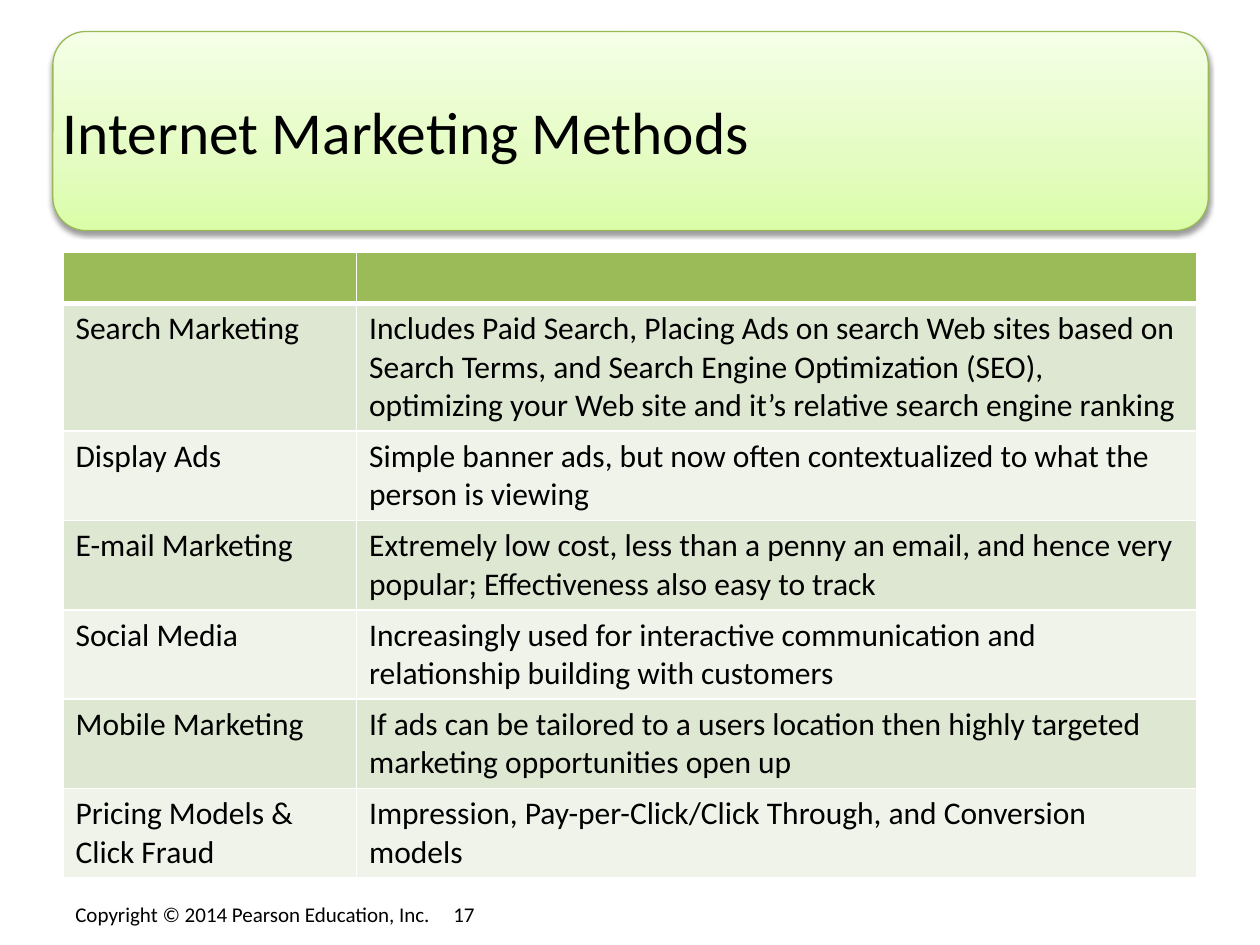
"""Build the Internet Marketing Methods slide with its table of methods."""
import pptx
import pptx.dml.color
import pptx.enum.shapes
import pptx.enum.text
import pptx.oxml
import pptx.oxml.ns
import pptx.util

Inches = pptx.util.Inches

COLORS = {
    "text": "000000",
    "border": "FFFFFF",
    "header": "9BBB59",
    "odd row": "DEE7D1",
    "even row": "EFF3EA",
    "banner line": "98B955",
    "shadow": "000000",
}
BANNER_STOPS = [(0, "DAFDA7"), (35, "E4FCC2"), (100, "F5FFE7")]
TITLE = "Internet Marketing Methods"
FOOTER = "Copyright © 2014 Pearson Education, Inc. \t17"
FOOTER_TAB = 3.0
METHODS = [
    ("", ""),
    ("Search Marketing",
     "Includes Paid Search, Placing Ads on search Web sites based on Search Terms, and "
     "Search Engine Optimization (SEO), optimizing your Web site and it’s relative "
     "search engine ranking"),
    ("Display Ads",
     "Simple banner ads, but now often contextualized to what the person is viewing"),
    ("E-mail Marketing",
     "Extremely low cost, less than a penny an email, and hence very popular; "
     "Effectiveness also easy to track"),
    ("Social Media",
     "Increasingly used for interactive communication and relationship building with "
     "customers"),
    ("Mobile Marketing",
     "If ads can be tailored to a users location then highly targeted marketing "
     "opportunities open up"),
    ("Pricing Models & Click Fraud",
     "Impression, Pay-per-Click/Click Through, and Conversion models"),
]
COLUMN_WIDTHS = [2.33, 6.67]
ROW_HEIGHTS = [0.41, 1.01] + [0.71] * 5
BODY_FORMAT = {"name": "Calibri", "size": pptx.util.Pt(18), "bold": False}
TITLE_FORMAT = {**BODY_FORMAT, "size": pptx.util.Pt(34)}
FOOTER_FORMAT = {**BODY_FORMAT, "size": pptx.util.Pt(12)}


def rgb(name):
    return pptx.dml.color.RGBColor.from_string(COLORS[name])


def element(markup):
    head, rest = markup.split(" ", 1)
    return pptx.oxml.parse_xml(f"{head} {pptx.oxml.ns.nsdecls('a')} {rest}")


def write(frame, text, values):
    para = frame.paragraphs[0]
    if text:
        para.add_run().text = text
    for font in [para.font] + [span.font for span in para.runs]:
        for key, value in values.items():
            setattr(font, key, value)
        font.color.rgb = rgb("text")


def add_text(page, place, text, values, margin=None):
    frame = page.shapes.add_textbox(*map(Inches, place)).text_frame
    frame.word_wrap = True
    if margin is not None:
        for side in ("left", "top", "right", "bottom"):
            setattr(frame, f"margin_{side}", Inches(margin))
    if "\t" in text:
        tabs = element(f'<a:tabLst ><a:tab pos="{Inches(FOOTER_TAB)}" algn="l"/></a:tabLst>')
        frame.paragraphs[0]._p.get_or_add_pPr().append(tabs)
    write(frame, text, values)
    return frame


def add_banner(page):
    kind = pptx.enum.shapes.MSO_SHAPE.ROUNDED_RECTANGLE
    banner = page.shapes.add_shape(kind, *map(Inches, (0.42, 0.25, 9.17, 1.58)))
    banner.fill.gradient()
    banner.fill.gradient_angle = 90
    stops = banner._element.spPr.find(".//" + pptx.oxml.ns.qn("a:gsLst"))
    stops.clear()
    for position, color in BANNER_STOPS:
        stops.append(element(
            f'<a:gs pos="{position * 1000}"><a:srgbClr val="{color}"/></a:gs>'))
    banner.line.color.rgb = rgb("banner line")
    banner.line.width = pptx.util.Pt(0.75)
    banner.shadow.inherit = False
    effects = banner._element.spPr.find(pptx.oxml.ns.qn("a:effectLst"))
    effects.append(element(
        f'<a:outerShdw blurRad="{pptx.util.Pt(3.1)}" dist="{pptx.util.Pt(1.6)}" '
        f'dir="5400000" rotWithShape="0"><a:srgbClr val="{COLORS["shadow"]}">'
        '<a:alpha val="38000"/></a:srgbClr></a:outerShdw>'))


def set_borders(cell, widths):
    for index, (side, width) in enumerate(widths.items()):
        cell._tc.get_or_add_tcPr().insert(index, element(
            f'<a:ln{side} w="{pptx.util.Pt(width)}"><a:solidFill>'
            f'<a:srgbClr val="{COLORS["border"]}"/></a:solidFill></a:ln{side}>'))


def add_methods(page):
    place = (0.5, 2, sum(COLUMN_WIDTHS), sum(ROW_HEIGHTS))
    table = page.shapes.add_table(
        len(METHODS), len(COLUMN_WIDTHS), *map(Inches, place)).table
    for column, width in zip(table.columns, COLUMN_WIDTHS):
        column.width = Inches(width)
    for index, (row, height, texts) in enumerate(zip(table.rows, ROW_HEIGHTS, METHODS)):
        row.height = Inches(height)
        band = "header" if index == 0 else "odd row" if index % 2 else "even row"
        widths = {"L": 1, "R": 1, "T": 3 if index == 1 else 1, "B": 3 if index == 0 else 1}
        for cell, text in zip(row.cells, texts):
            cell.fill.solid()
            cell.fill.fore_color.rgb = rgb(band)
            set_borders(cell, widths)
            write(cell.text_frame, text, BODY_FORMAT)


def main():
    deck = pptx.Presentation()
    deck.slide_width, deck.slide_height = Inches(10), Inches(7.5)
    page = deck.slides.add_slide(deck.slide_layouts[6])
    add_text(page, (0.5, 7.11, 9, 0.3), FOOTER, FOOTER_FORMAT)
    add_banner(page)
    title = add_text(page, (0.5, 0.33, 9, 1.42), TITLE, TITLE_FORMAT, margin=0)
    title.vertical_anchor = pptx.enum.text.MSO_ANCHOR.MIDDLE
    add_methods(page)
    deck.save("out.pptx")


if __name__ == "__main__":
    main()
